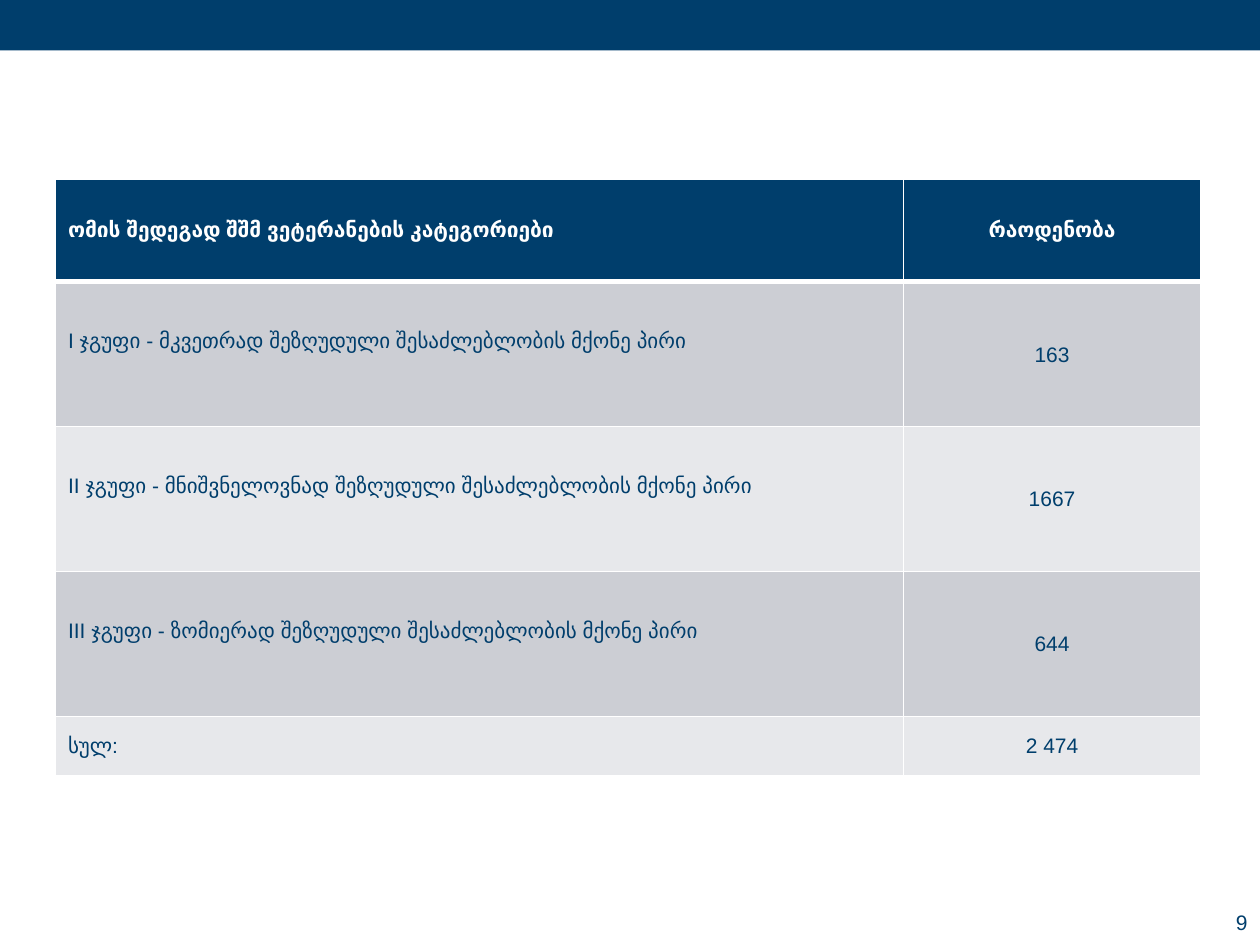
from dataclasses import dataclass

import pptx
import pptx.dml.color
import pptx.enum.shapes
import pptx.enum.text
import pptx.oxml
import pptx.oxml.ns
import pptx.util
from lxml import etree

SLIDE_WIDTH, SLIDE_HEIGHT = 10, 7.5
COLORS = {
    "navy": "003E6C",
    "white": "FFFFFF",
    "band_dark": "CCCED4",
    "band_light": "E7E8EB",
}
COLUMN_WIDTHS = (6.73, 2.36)
ALIGN = pptx.enum.text.PP_ALIGN
MIDDLE = pptx.enum.text.MSO_ANCHOR.MIDDLE


@dataclass(frozen=True)
class TableRow:
    category: str
    count: str
    height: float
    fill: str
    is_header: bool = False
    is_group: bool = False


ROWS = (
    TableRow("ომის შედეგად შშმ ვეტერანების კატეგორიები", "რაოდენობა", 0.81, "navy", is_header=True),
    TableRow("I ჯგუფი - მკვეთრად შეზღუდული შესაძლებლობის მქონე პირი", "163", 1.15, "band_dark", is_group=True),
    TableRow("II ჯგუფი - მნიშვნელოვნად შეზღუდული შესაძლებლობის მქონე პირი", "1667", 1.15, "band_light", is_group=True),
    TableRow("III ჯგუფი - ზომიერად შეზღუდული შესაძლებლობის მქონე პირი", "644", 1.15, "band_dark", is_group=True),
    TableRow("სულ:", "2 474", 0.47, "band_light"),
)


def x(share: float) -> int:
    return pptx.util.Inches(SLIDE_WIDTH * share)


def y(share: float) -> int:
    return pptx.util.Inches(SLIDE_HEIGHT * share)


def rgb(name: str) -> pptx.dml.color.RGBColor:
    return pptx.dml.color.RGBColor.from_string(COLORS[name])


def write(frame, text: str, color: str, alignment, bold: bool = False) -> None:
    paragraph = frame.paragraphs[0]
    paragraph.text = text
    paragraph.alignment = alignment
    paragraph.font.name = "Arial"
    paragraph.font.size = pptx.util.Pt(12)
    paragraph.font.bold = bold
    paragraph.font.color.rgb = rgb(color)


def add_border(cell, side: str, points: float) -> None:
    qn = pptx.oxml.ns.qn
    properties = cell._tc.get_or_add_tcPr()
    line = etree.SubElement(properties, qn(f"a:ln{side}"), w=str(pptx.util.Pt(points)))
    fill = etree.SubElement(line, qn("a:solidFill"))
    etree.SubElement(fill, qn("a:srgbClr"), val=COLORS["white"])


def style_cell(cell, row: TableRow, top_border: float) -> None:
    bottom_border = 3 if row.is_header else 1
    for side, points in (("L", 1), ("R", 1), ("T", top_border), ("B", bottom_border)):
        add_border(cell, side, points)
    cell.fill.solid()
    cell.fill.fore_color.rgb = rgb(row.fill)
    cell.vertical_anchor = MIDDLE


def add_category_table(slide) -> None:
    table = slide.shapes.add_table(
        len(ROWS), len(COLUMN_WIDTHS), x(0.044), y(0.19),
        pptx.util.Inches(sum(COLUMN_WIDTHS)),
        pptx.util.Inches(sum(row.height for row in ROWS)),
    ).table
    for column, width in zip(table.columns, COLUMN_WIDTHS):
        column.width = pptx.util.Inches(width)
    for index, row in enumerate(ROWS):
        table.rows[index].height = pptx.util.Inches(row.height)
        category, count = table.cell(index, 0), table.cell(index, 1)
        for cell in (category, count):
            style_cell(cell, row, 3 if index == 1 else 1)
        color = "white" if row.is_header else "navy"
        alignment = ALIGN.JUSTIFY if row.is_group else ALIGN.LEFT
        write(category.text_frame, row.category, color, alignment, row.is_header)
        write(count.text_frame, row.count, color, ALIGN.CENTER, row.is_header)
        if row.is_group:
            category.margin_bottom = pptx.util.Inches(0.25)
            count.margin_left = count.margin_right = count.margin_top = pptx.util.Inches(0.01)
            count.margin_bottom = 0


def add_top_band(slide) -> None:
    band = slide.shapes.add_shape(
        pptx.enum.shapes.MSO_SHAPE.RECTANGLE, 0, 0, x(1), pptx.util.Inches(0.4)
    )
    band.shadow.inherit = False
    band.fill.solid()
    band.fill.fore_color.rgb = rgb("navy")
    band.line.fill.background()


def add_page_number(slide) -> None:
    frame = slide.shapes.add_textbox(x(0.883), y(0.952), x(0.117), y(0.048)).text_frame
    frame.word_wrap = True
    frame.vertical_anchor = MIDDLE
    write(frame, "9", "navy", ALIGN.RIGHT)


def main() -> None:
    presentation = pptx.Presentation()
    presentation.slide_width, presentation.slide_height = x(1), y(1)
    slide = presentation.slides.add_slide(presentation.slide_layouts[6])
    add_top_band(slide)
    add_category_table(slide)
    add_page_number(slide)
    presentation.save("out.pptx")


if __name__ == "__main__":
    main()
